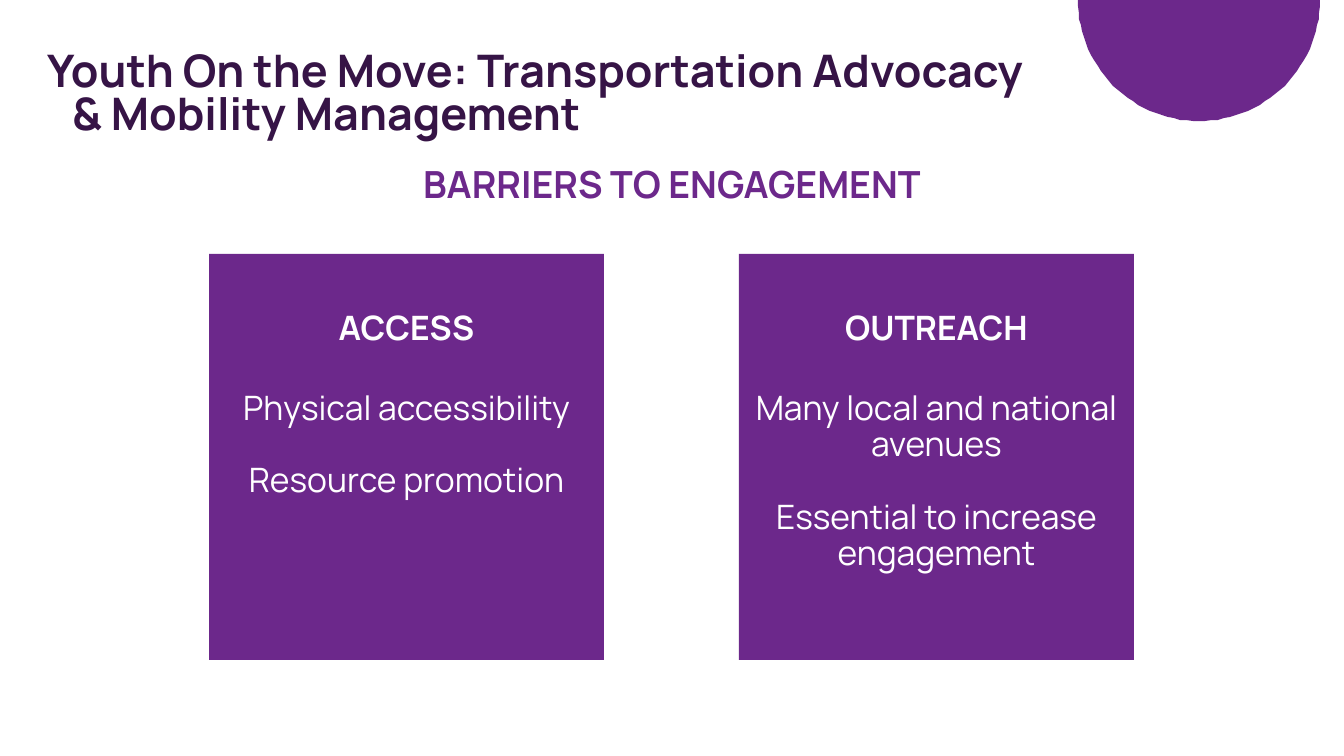
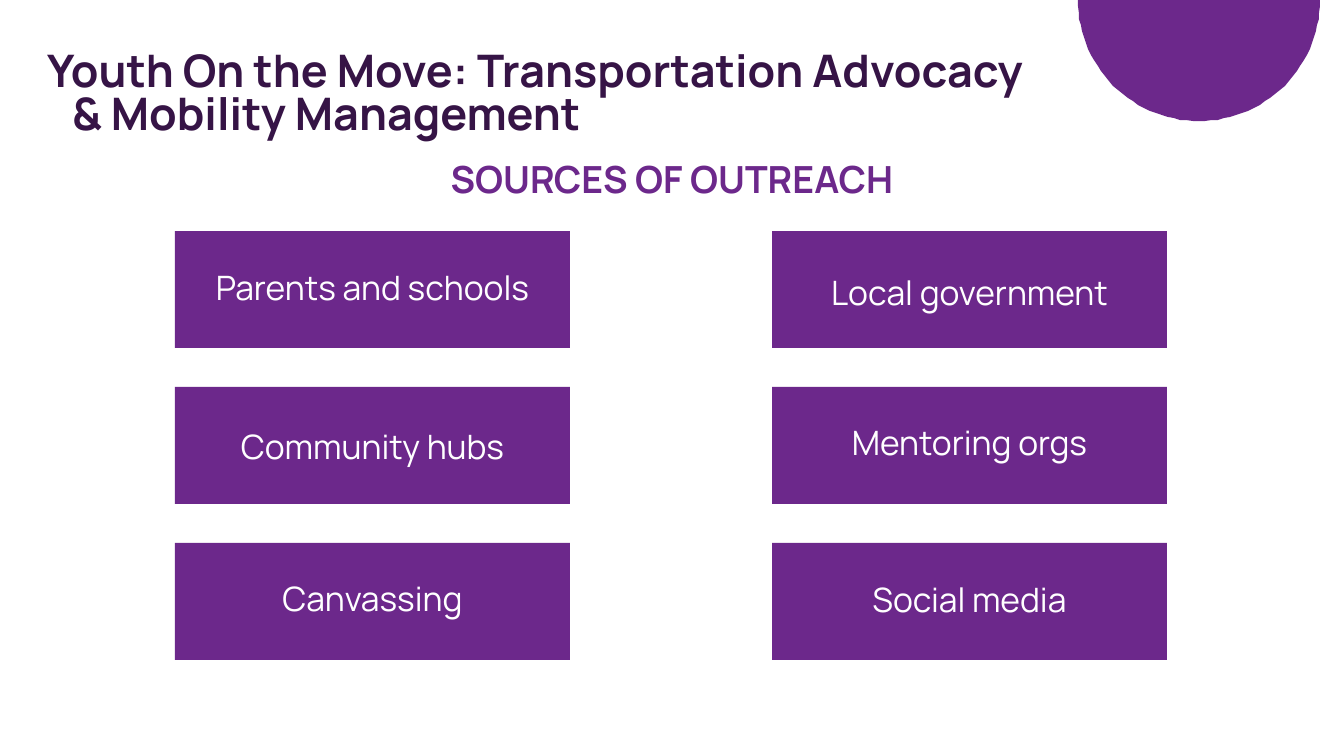
"""Build two slides on barriers to engagement and sources of outreach."""
from math import cos, pi, sin

from pptx import Presentation
from pptx.dml.color import RGBColor
from pptx.enum.shapes import MSO_SHAPE
from pptx.enum.text import MSO_ANCHOR, MSO_AUTO_SIZE, PP_ALIGN
from pptx.util import Pt

RECT = MSO_SHAPE.RECTANGLE
TOP = MSO_ANCHOR.TOP
NO_FIT = MSO_AUTO_SIZE.NONE
LEFT, CENTER = PP_ALIGN.LEFT, PP_ALIGN.CENTER

PURPLE = RGBColor(0x6C, 0x28, 0x8B)
DARK = RGBColor(0x36, 0x14, 0x46)
WHITE = RGBColor(0xFF, 0xFF, 0xFF)

PX = 914400 / 134.4
TITLE = "Youth On the Move: Transportation Advocacy & Mobility Management"
TITLE_FONT = {"size": Pt(24), "bold": True, "color": DARK}
HEADING_FONT = {"size": Pt(20), "bold": True, "color": PURPLE}
LABEL_FONT = {"size": Pt(18), "bold": True, "color": WHITE}
BODY_FONT = {"size": Pt(18), "bold": False, "color": WHITE}
CARD_W, TEXT_W, TEXT_H = 395, 509, 52
OVERHANG = (TEXT_W - CARD_W) // 2


def px(*lengths):
    return [round(length * PX) for length in lengths]


def write(sp, lines, font, align=CENTER, spacing=0.9, inset=13):
    tf = sp.text_frame
    frame = {"word_wrap": True, "auto_size": NO_FIT, "vertical_anchor": TOP}
    margins = px(13, inset, 13, inset)
    sides = ("margin_left", "margin_top", "margin_right", "margin_bottom")
    for name, value in {**frame, **dict(zip(sides, margins))}.items():
        setattr(tf, name, value)
    for i, line in enumerate(lines):
        p = tf.add_paragraph() if i else tf.paragraphs[0]
        p.alignment, p.line_spacing = align, spacing
        p.space_before = Pt(19.5 if i else 0)
        r = p.add_run()
        r.text = line
        r.font.name = "Manrope"
        r.font.color.rgb = font["color"]
        for name in ("size", "bold"):
            setattr(r.font, name, font[name])


prs = Presentation()
prs.slide_width, prs.slide_height = px(1344, 756)

slides = []
for heading, heading_top in (("BARRIERS TO ENGAGEMENT", 153), ("SOURCES OF OUTREACH", 148)):
    s = prs.slides.add_slide(prs.slide_layouts[5])
    slides.append(s)

    arc = [(1199 + 121 * cos(pi * k / 60), 121 * sin(pi * k / 60)) for k in range(61)]
    builder = s.shapes.build_freeform(*arc[0], scale=PX)
    builder.add_line_segments(arc[1:], close=True)
    sp = builder.convert_to_shape()
    sp.shadow.inherit = False
    sp.fill.solid()
    sp.fill.fore_color.rgb = PURPLE
    sp.line.fill.background()

    title = s.shapes.title
    title.left, title.top, title.width, title.height = px(34, 46, 1004, 101)
    write(title, [TITLE], TITLE_FONT, LEFT, 0.8, 7)
    pPr = title.text_frame.paragraphs[0]._p.get_or_add_pPr()
    indent = px(25)[0]
    pPr.set("marL", str(indent))
    pPr.set("indent", str(-indent))

    sp = s.shapes.add_textbox(*px(310, heading_top, 724, 101))
    write(sp, [heading], HEADING_FONT)

barriers, sources = slides
cards = []
for x, label, lines in (
    (209, "ACCESS", ["Physical accessibility", "Resource promotion"]),
    (739, "OUTREACH", ["Many local and national avenues", "Essential to increase engagement"]),
):
    texts = [(298, [label], LABEL_FONT), (378, lines, BODY_FONT)]
    cards.append((barriers.shapes, x, 254, 406, texts))

for x, column in (
    (175, [("Parents and schools", 258), ("Community hubs", 417), ("Canvassing", 569)]),
    (772, [("Local government", 263), ("Mentoring orgs", 413), ("Social media", 570)]),
):
    for row, (source, text_top) in enumerate(column):
        group = sources.shapes.add_group_shape()
        texts = [(text_top, [source], BODY_FONT)]
        cards.append((group.shapes, x, 231 + 156 * row, 117, texts))

for shapes, x, y, height, texts in cards:
    sp = shapes.add_shape(RECT, *px(x, y, CARD_W, height))
    sp.shadow.inherit = False
    sp.fill.solid()
    sp.fill.fore_color.rgb = PURPLE
    sp.line.fill.background()
    for text_top, lines, font in texts:
        sp = shapes.add_textbox(*px(x - OVERHANG, text_top, TEXT_W, TEXT_H))
        write(sp, lines, font)

prs.save("out.pptx")
